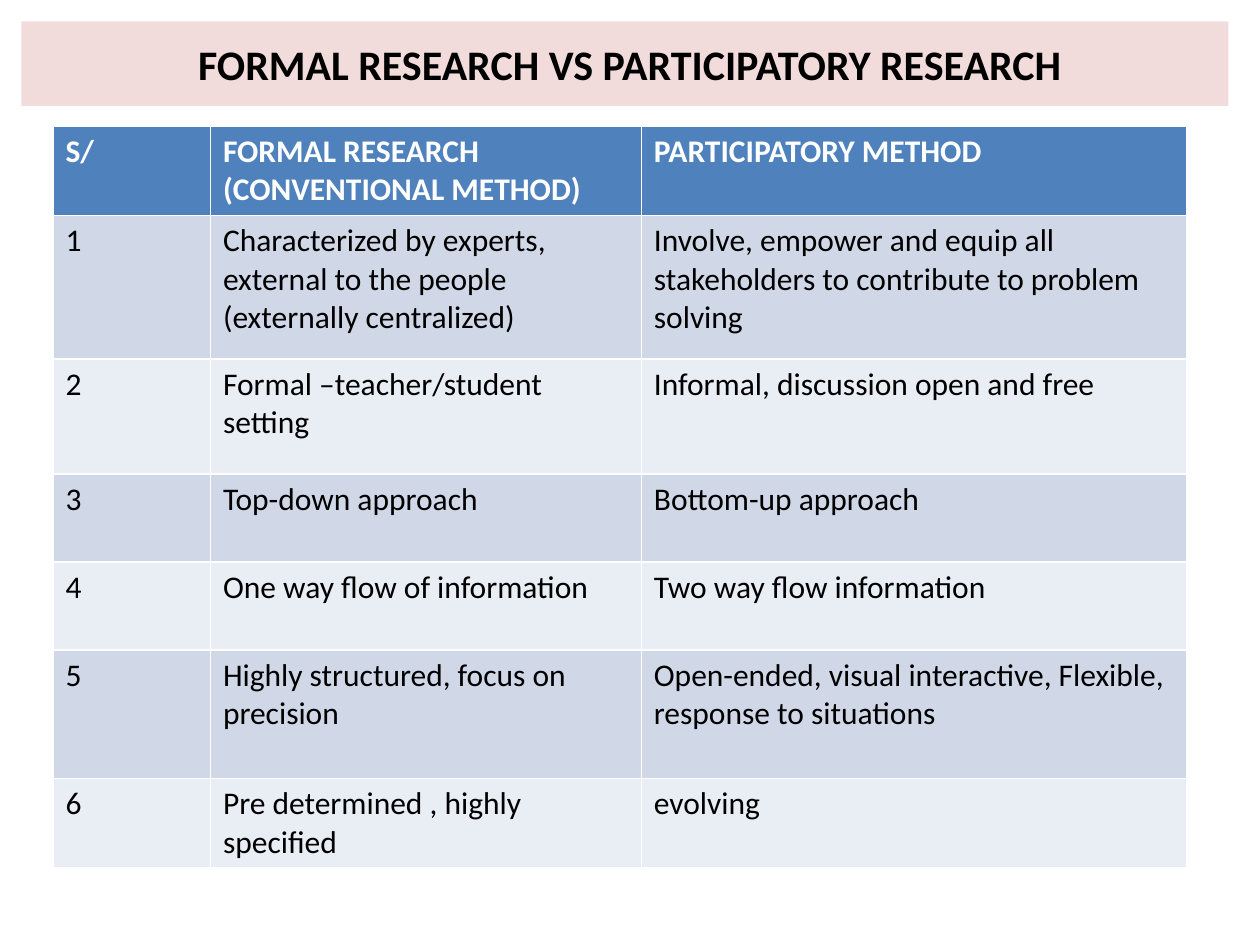
from pptx import Presentation
from pptx.dml.color import RGBColor
from pptx.enum.text import MSO_ANCHOR, PP_ALIGN
from pptx.util import Inches, Pt

CENTER = PP_ALIGN.CENTER
MIDDLE = MSO_ANCHOR.MIDDLE
COLORS = {
    "banner": "F2DCDB",
    "header": "4F81BD",
    "odd": "D0D8E8",
    "even": "E9EDF4",
    "dark": "000000",
    "light": "FFFFFF",
}
FORMATS = {
    "title": {"name": "Calibri", "size": Pt(24), "bold": True},
    "header": {"name": "Calibri", "size": Pt(18), "bold": True},
    "body": {"name": "Calibri", "size": Pt(18), "bold": False},
}
COLUMN_WIDTHS = [1.25, 3.42, 4.33]
ROW_HEIGHTS = [0.7, 1.14, 0.91, 0.7, 0.7, 1.02, 0.7]
COMPARISON = [
    ("S/", "FORMAL RESEARCH (CONVENTIONAL METHOD)", "PARTICIPATORY METHOD"),
    ("1", "Characterized by experts, external to the people (externally centralized)",
     "Involve, empower and equip all stakeholders to contribute to problem solving"),
    ("2", "Formal –teacher/student setting", "Informal, discussion open and free"),
    ("3", "Top-down approach", "Bottom-up approach"),
    ("4", "One way flow of information", "Two way flow information"),
    ("5", "Highly structured, focus on precision",
     "Open-ended, visual interactive, Flexible, response to situations"),
    ("6", "Pre determined , highly specified", "evolving"),
]


def paint(fill, color):
    fill.solid()
    fill.fore_color.rgb = RGBColor.from_string(COLORS[color])


def write(paragraph, text, style, color):
    run = paragraph.add_run()
    run.text = text
    for attribute, value in FORMATS[style].items():
        setattr(run.font, attribute, value)
    run.font.color.rgb = RGBColor.from_string(COLORS[color])


presentation = Presentation()
presentation.slide_width = Inches(10)
presentation.slide_height = Inches(7.5)
slide = presentation.slides.add_slide(presentation.slide_layouts[5])

title = slide.shapes.title
title_place = {"left": 0.17, "top": 0.17, "width": 9.58, "height": 0.67}
for attribute, value in title_place.items():
    setattr(title, attribute, Inches(value))
paint(title.fill, "banner")
title.text_frame.vertical_anchor = MIDDLE
title_paragraph = title.text_frame.paragraphs[0]
title_paragraph.alignment = CENTER
write(title_paragraph, " FORMAL RESEARCH VS PARTICIPATORY RESEARCH", "title", "dark")

table = slide.shapes.add_table(
    len(ROW_HEIGHTS), len(COLUMN_WIDTHS), Inches(0.42), Inches(1),
    Inches(sum(COLUMN_WIDTHS)), Inches(sum(ROW_HEIGHTS)),
).table
for column, width in zip(table.columns, COLUMN_WIDTHS):
    column.width = Inches(width)
for row_index, (row, height) in enumerate(zip(table.rows, ROW_HEIGHTS)):
    row.height = Inches(height)
    if row_index == 0:
        style, fill_color, text_color = "header", "header", "light"
    else:
        style, text_color = "body", "dark"
        fill_color = "odd" if row_index % 2 else "even"
    for cell, text in zip(row.cells, COMPARISON[row_index]):
        paint(cell.fill, fill_color)
        write(cell.text_frame.paragraphs[0], text, style, text_color)

presentation.save("out.pptx")
